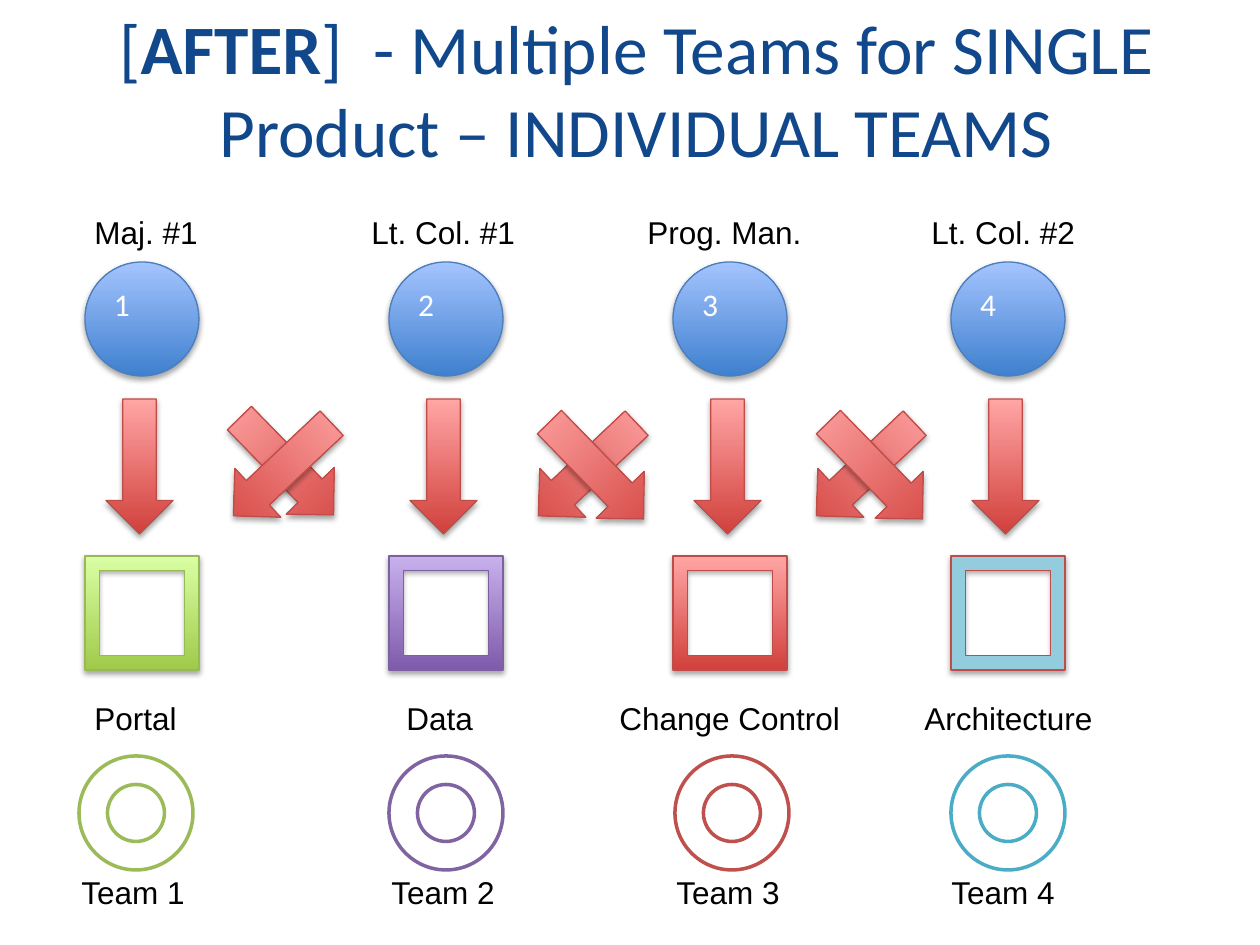
"""Build a slide that pairs four leads with four teams on a single product."""
from lxml import etree
from pptx import Presentation
from pptx.dml.color import RGBColor
from pptx.enum.shapes import MSO_SHAPE
from pptx.enum.text import MSO_ANCHOR, MSO_AUTO_SIZE, PP_ALIGN
from pptx.oxml import parse_xml
from pptx.oxml.ns import qn
from pptx.util import Emu, Pt

OVAL, FRAME = MSO_SHAPE.OVAL, MSO_SHAPE.FRAME
ARROW, DONUT = MSO_SHAPE.DOWN_ARROW, MSO_SHAPE.DONUT
TOP, MIDDLE = MSO_ANCHOR.TOP, MSO_ANCHOR.MIDDLE
LEFT, CENTER = PP_ALIGN.LEFT, PP_ALIGN.CENTER
GROW = MSO_AUTO_SIZE.SHAPE_TO_FIT_TEXT

WHITE = RGBColor(0xFF, 0xFF, 0xFF)
BLACK = RGBColor(0, 0, 0)
NAVY = RGBColor(0x11, 0x48, 0x8B)
BLUES = RGBColor(0x3F, 0x80, 0xCE), RGBColor(0xA4, 0xC4, 0xFF)
REDS = RGBColor(0xD1, 0x40, 0x3C), RGBColor(0xFF, 0xA6, 0xA5)
GREENS = RGBColor(0xA0, 0xCA, 0x4A), RGBColor(0xDA, 0xFF, 0xA5)
PLUMS = RGBColor(0x7F, 0x5B, 0xAB), RGBColor(0xC8, 0xB0, 0xED)
AQUA = (RGBColor(0x93, 0xCD, 0xDD),)
BLUE_EDGE = RGBColor(0x4B, 0x7E, 0xBC)
RED_EDGE = RGBColor(0xBF, 0x4C, 0x48)
GREEN_EDGE = RGBColor(0x98, 0xB9, 0x55)
PLUM_EDGE = RGBColor(0x7D, 0x60, 0xA0)
GREEN_RING = RGBColor(0x9B, 0xBB, 0x59)
PLUM_RING = RGBColor(0x80, 0x64, 0xA2)
RED_RING = RGBColor(0xC0, 0x50, 0x4D)
AQUA_RING = RGBColor(0x4B, 0xAC, 0xC6)

SCALE = 914400 / 126
SIDE = 114
SHADOW = etree.fromstring(
    '<a:outerShdw xmlns:a="http://schemas.openxmlformats.org/drawingml/2006/main"'
    ' blurRad="40000" dist="23000" dir="5400000" rotWithShape="0">'
    '<a:srgbClr val="000000"><a:alpha val="35000"/></a:srgbClr></a:outerShdw>')

deck = Presentation()
deck.slide_width, deck.slide_height = Emu(9144000), Emu(6858000)
shapes = deck.slides.add_slide(deck.slide_layouts[6]).shapes


def draw(kind, x, y, w, h, fills, edge, turn=0, width=0.75, shade=True):
    """Add a shape with a plain or upward gradient fill."""
    shape = shapes.add_shape(kind, *[Emu(round(n * SCALE)) for n in (x, y, w, h)])
    shape.rotation = turn
    if len(fills) == 2:
        shape.fill.gradient()
        shape.fill.gradient_angle = 90
        for stop, color in zip(shape.fill.gradient_stops, fills):
            stop.color.rgb = color
    else:
        shape.fill.solid()
        shape.fill.fore_color.rgb = fills[0]
    shape.line.color.rgb = edge
    shape.line.width = Pt(width)
    shape.shadow.inherit = False
    if shade:
        effects = shape._element.spPr.find(qn("a:effectLst"))
        effects.append(parse_xml(etree.tostring(SHADOW)))
    return shape


def label(x, y, w, text):
    """Add a one-line caption that fits its text."""
    box = shapes.add_textbox(*[Emu(round(n * SCALE)) for n in (x, y, w, 50)])
    frame = box.text_frame
    frame.word_wrap = False
    frame.auto_size = GROW
    para = frame.paragraphs[0]
    para.text = text
    para.font.size, para.font.name = Pt(18), "Arial"
    para.font.color.rgb = BLACK


title = shapes.add_textbox(*[Emu(round(n * SCALE)) for n in (42, 38, 1189, 101)])
title.text_frame.word_wrap = True
title.text_frame.vertical_anchor = MIDDLE
para = title.text_frame.paragraphs[0]
para.alignment = CENTER
para.font.size, para.font.name = Pt(39.6), "Calibri"
para.font.color.rgb = NAVY
for text, bold in (("[", False), ("AFTER", True),
                   ("]  - Multiple Teams for SINGLE Product – INDIVIDUAL TEAMS", False)):
    run = para.add_run()
    run.text, run.font.bold = text, bold

teams = [
    (85, (82, 130, "Maj. #1"), (82, 108, "Portal"), 69, 79, GREENS, GREEN_EDGE, GREEN_RING),
    (389, (359, 170, "Lt. Col. #1"), (394, 93, "Data"), 379, 389, PLUMS, PLUM_EDGE, PLUM_RING),
    (673, (635, 181, "Prog. Man."), (607, 248, "Change Control"), 664, 675,
     REDS, RED_EDGE, RED_RING),
    (951, (919, 170, "Lt. Col. #2"), (912, 197, "Architecture"), 939, 951,
     AQUA, RED_EDGE, AQUA_RING),
]
for num, (x, lead, area, team, ring, fills, edge, hue) in enumerate(teams, 1):
    label(lead[0], 207, lead[1], lead[2])
    ball = draw(OVAL, x, 262, SIDE, SIDE, BLUES, BLUE_EDGE)
    ball.text_frame.vertical_anchor = TOP
    para = ball.text_frame.paragraphs[0]
    para.text, para.alignment = str(num), LEFT
    para.font.size, para.font.name = Pt(18), "Calibri"
    para.font.color.rgb = WHITE
    draw(ARROW, x + 21, 399, 67, 135, REDS, RED_EDGE)
    draw(FRAME, x, 556, SIDE, SIDE, fills, edge)
    label(area[0], 693, area[1], area[2])
    draw(DONUT, ring, 756, SIDE, SIDE, (WHITE,), hue, width=2, shade=False)
    label(team, 867, 130, f"Team {num}")

for x, y, turn in ((253, 399, 315.8), (249, 402, 46.7), (554, 402, 46.7),
                   (563, 403, 315.8), (832, 402, 46.7), (842, 403, 315.8)):
    draw(ARROW, x, y, 67, 135, REDS, RED_EDGE, turn)

deck.save("out.pptx")
